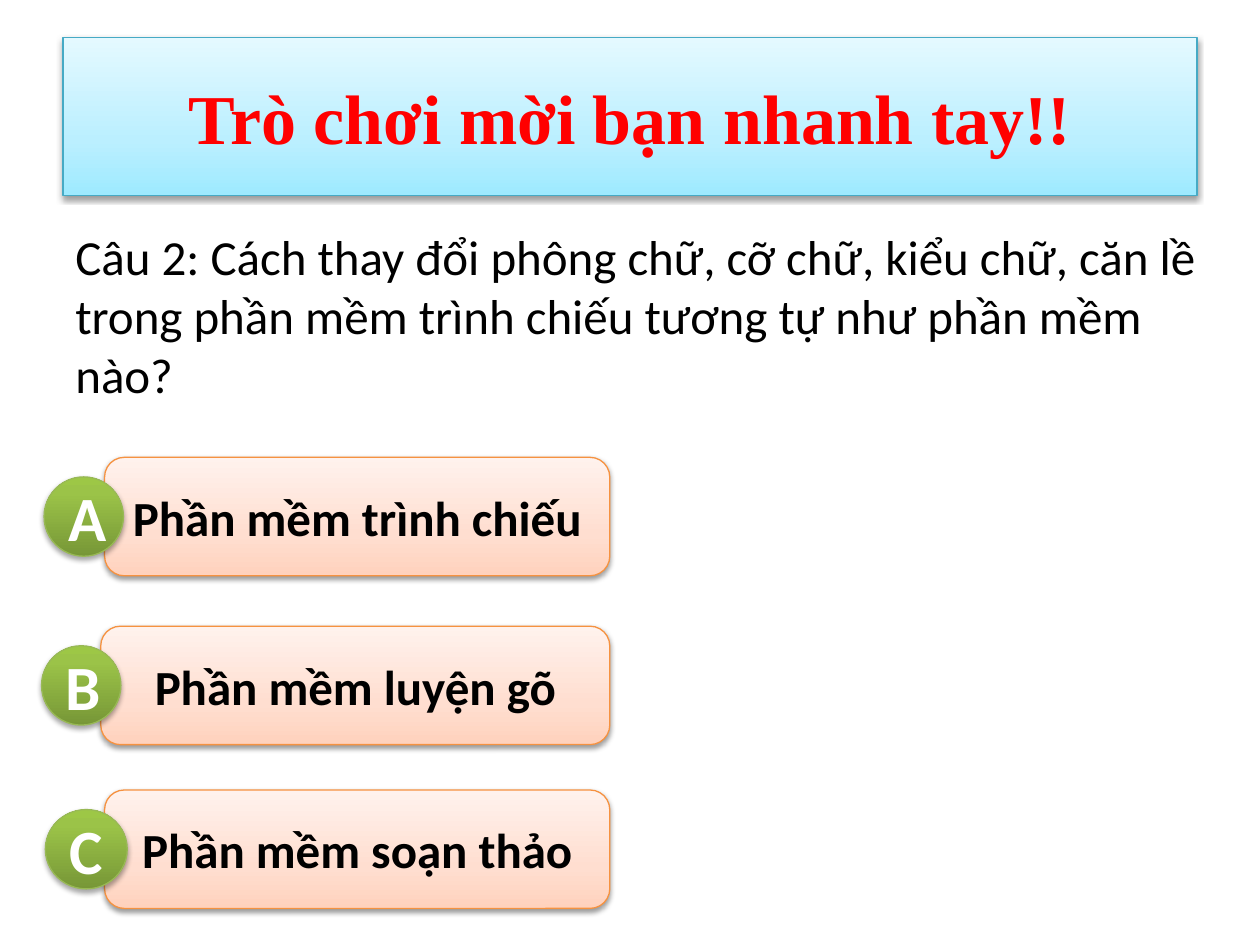
from lxml.etree import SubElement
from pptx import Presentation
from pptx.dml.color import RGBColor
from pptx.enum.shapes import MSO_SHAPE as Kind
from pptx.enum.text import MSO_ANCHOR as Anchor, PP_ALIGN as Align
from pptx.oxml.ns import qn
from pptx.util import Inches, Pt

TITLE = "Trò chơi mời bạn nhanh tay!!"
ASK = ("Câu 2: Cách thay đổi phông chữ, cỡ chữ, kiểu chữ, căn lề "
       "trong phần mềm trình chiếu tương tự như phần mềm nào?")
# letter, answer, bar left, bar top, disc left, disc width
ROWS = [
    ("A", "Phần mềm trình chiếu", 0.83, 3.63, 0.35, 0.63),
    ("B", "Phần mềm luyện gõ", 0.80, 4.97, 0.33, 0.63),
    ("C", "Phần mềm soạn thảo", 0.83, 6.27, 0.36, 0.65),
]
RIGHT, BAR_H, DISC_H = 4.84, 0.94, 0.63

THEME = {
    "sans": "Calibri", "serif": "Times New Roman",
    "black": "000000", "white": "FFFFFF", "red": "FF0000",
    "title": 40, "body": 28, "letter": 36,
    # stops from bottom to top, line, shadow opacity, shadow distance
    "blue": ([(0, "9EEAFF"), (35, "BBEFFF"), (100, "E4F9FF")], "46AAC5", 38, 1.6),
    "peach": ([(0, "FFD2BD"), (35, "FFDED0"), (100, "FFF2ED")], "F69240", 38, 1.6),
    "green": ([(0, "779737"), (80, "9BC348"), (100, "9DC746")], "98B955", 35, 1.8),
}


def place(shape, x, y, w, h):
    shape.left, shape.top = Inches(x), Inches(y)
    shape.width, shape.height = Inches(w), Inches(h)


def write(shape, text, size="body", font="sans", color="black", bold=True,
          align=Align.CENTER, anchor=Anchor.MIDDLE):
    frame = shape.text_frame
    frame.word_wrap = True
    frame.vertical_anchor = anchor
    para = frame.paragraphs[0]
    para.alignment = align
    run = para.add_run()
    run.text = text
    run.font.size = Pt(THEME[size])
    run.font.name = THEME[font]
    run.font.bold = bold
    run.font.color.rgb = RGBColor.from_string(THEME[color])


def paint(shape, style):
    """Give the shape a gradient, a thin line and a soft shadow below."""
    stops, line, alpha, dist = THEME[style]
    shape.fill.gradient()
    shape.fill.gradient_angle = 90
    shape.line.color.rgb = RGBColor.from_string(line)
    shape.line.width = Pt(0.75)
    shape.shadow.inherit = False
    props = shape._element.spPr

    ramp = props.find(".//" + qn("a:gsLst"))
    for old in list(ramp):
        ramp.remove(old)
    for pos, color in stops:
        stop = SubElement(ramp, qn("a:gs"), pos=str(pos * 1000))
        SubElement(stop, qn("a:srgbClr"), val=color)

    shade = SubElement(props.find(qn("a:effectLst")), qn("a:outerShdw"),
                       blurRad=str(Pt(3.1)), dist=str(Pt(dist)),
                       dir="5400000", rotWithShape="0")
    tint = SubElement(shade, qn("a:srgbClr"), val=THEME["black"])
    SubElement(tint, qn("a:alpha"), val=str(alpha * 1000))


def add(slide, kind, style, text, box, **form):
    shape = slide.shapes.add_shape(kind, *map(Inches, box))
    paint(shape, style)
    write(shape, text, **form)


def main():
    deck = Presentation()
    deck.slide_width, deck.slide_height = Inches(10), Inches(7.5)
    slide = deck.slides.add_slide(deck.slide_layouts[5])

    title = slide.shapes.title
    place(title, 0.5, 0.3, 9, 1.25)
    paint(title, "blue")
    write(title, TITLE, size="title", font="serif", color="red")

    ask = slide.shapes.add_textbox(*map(Inches, (0.5, 1.75, 9.3, 1.06)))
    write(ask, ASK, bold=False, align=Align.LEFT, anchor=Anchor.TOP)

    for letter, answer, left, top, disc, wide in ROWS:
        add(slide, Kind.ROUNDED_RECTANGLE, "peach", answer,
            (left, top, RIGHT - left, BAR_H))
        add(slide, Kind.OVAL, "green", letter,
            (disc, top + (BAR_H - DISC_H) / 2, wide, DISC_H),
            size="letter", color="white")

    deck.save("out.pptx")


if __name__ == "__main__":
    main()
